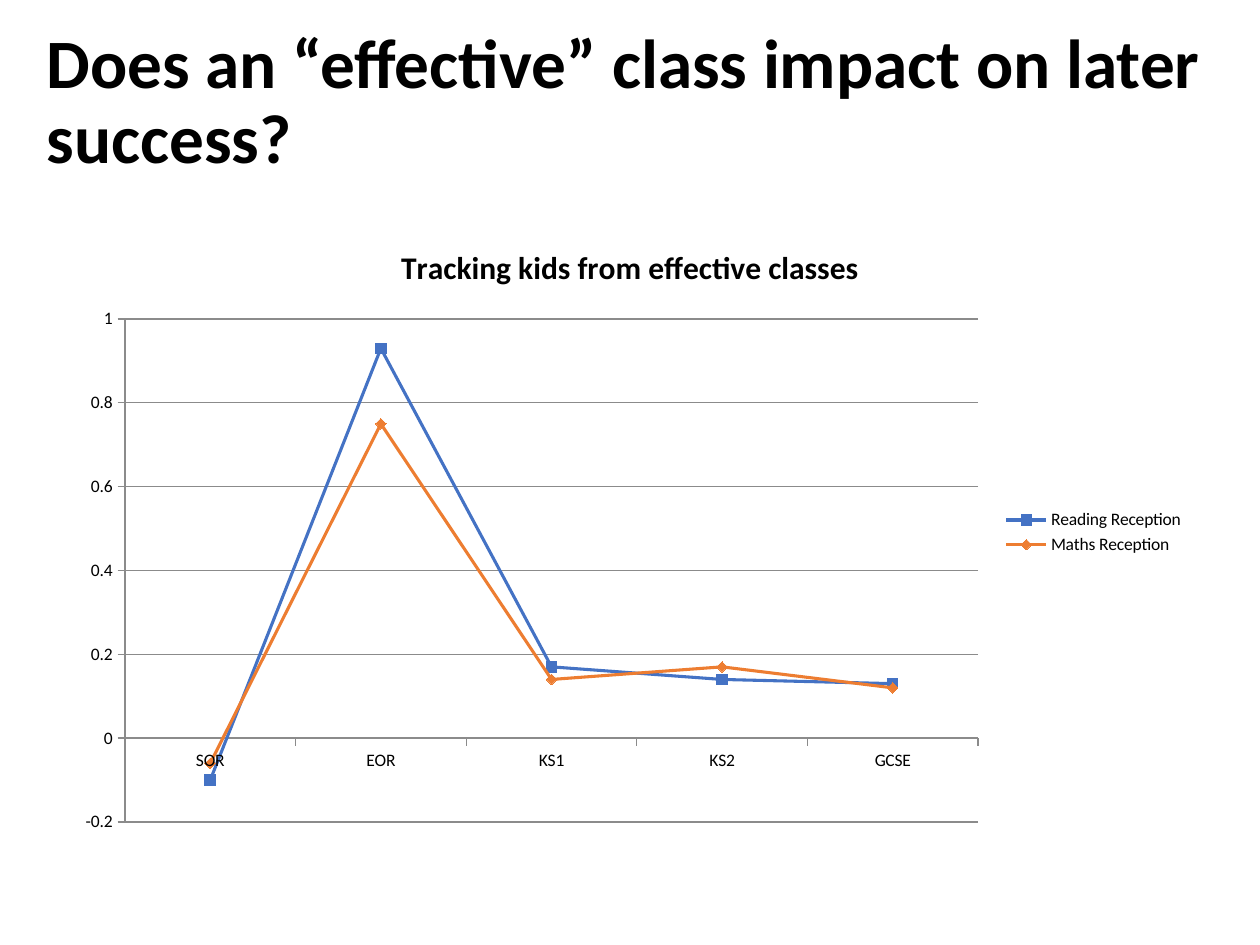
from pptx import Presentation
from pptx.chart.data import CategoryChartData
from pptx.dml.color import RGBColor
from pptx.enum import chart as ec, text as et
from pptx.util import Pt

BLACK = RGBColor(0, 0, 0)
GREY = RGBColor(0x8B, 0x8B, 0x8B)
BLUE = RGBColor(0x44, 0x72, 0xC4)
ORANGE = RGBColor(0xED, 0x7D, 0x31)
FACE = "Calibri"
STAGES = ("SOR", "EOR", "KS1", "KS2", "GCSE")
MARK = ec.XL_MARKER_STYLE
SERIES = (
    ("Reading Reception", (-0.1, 0.93, 0.17, 0.14, 0.13), BLUE, MARK.SQUARE),
    ("Maths Reception", (-0.06, 0.75, 0.14, 0.17, 0.12), ORANGE, MARK.DIAMOND),
)


def assign(item, values):
    """Set each attribute of item from a dict."""
    for name, value in values.items():
        setattr(item, name, value)


def style(font, size, bold=False):
    """Give a font the slide's face and colour."""
    assign(font, {"name": FACE, "size": Pt(size), "bold": bold})
    font.color.rgb = BLACK


def rule(line, color, width):
    """Draw a line in one colour and width."""
    line.color.rgb = color
    line.width = Pt(width)


def add_title(slide, box, words):
    """Place the slide's heading in the box."""
    title = slide.shapes.title
    assign(title, dict(zip(("left", "top", "width", "height"), map(Pt, box))))
    frame = title.text_frame
    frame.text = words
    assign(frame, {"word_wrap": True, "auto_size": et.MSO_AUTO_SIZE.NONE,
                   "vertical_anchor": et.MSO_ANCHOR.MIDDLE})
    para = frame.paragraphs[0]
    assign(para, {"alignment": et.PP_ALIGN.LEFT, "line_spacing": 0.9,
                  "space_before": Pt(0)})
    style(para.runs[0].font, 39.6, True)


def add_lines(slide, box, words):
    """Place the line chart of both subjects in the box."""
    data = CategoryChartData()
    data.categories = STAGES
    for name, values, *_ in SERIES:
        data.add_series(name, values)
    chart = slide.shapes.add_chart(
        ec.XL_CHART_TYPE.LINE_MARKERS, *map(Pt, box), data).chart
    style(chart.font, 10)
    head = chart.chart_title.text_frame
    head.text = words
    style(head.paragraphs[0].runs[0].font, 18, True)
    chart.has_legend = True
    assign(chart.legend, {"position": ec.XL_LEGEND_POSITION.RIGHT,
                          "include_in_layout": False})
    chart.plots[0].vary_by_categories = False
    for axis in (chart.category_axis, chart.value_axis):
        axis.major_tick_mark = ec.XL_TICK_MARK.OUTSIDE
        rule(axis.format.line, GREY, 0.75)
    scale = chart.value_axis
    assign(scale, {"minimum_scale": -0.2, "maximum_scale": 1,
                   "major_unit": 0.2, "has_major_gridlines": True})
    rule(scale.major_gridlines.format.line, GREY, 0.75)
    for line, (_, _, color, mark) in zip(chart.plots[0].series, SERIES):
        line.smooth = False
        rule(line.format.line, color, 1.75)
        assign(line.marker, {"style": mark, "size": 6})
        line.marker.format.fill.solid()
        line.marker.format.fill.fore_color.rgb = color
        rule(line.marker.format.line, color, 0.75)


def main():
    """Build and save the slide."""
    deck = Presentation()
    assign(deck, {"slide_width": Pt(720), "slide_height": Pt(540)})
    slide = deck.slides.add_slide(deck.slide_layouts[5])
    add_title(slide, (19.5, 14, 681, 90),
              "Does an “effective” class impact on later success?")
    add_lines(slide, (36, 126, 648, 356.5),
              "Tracking kids from effective classes")
    deck.save("out.pptx")


if __name__ == "__main__":
    main()
